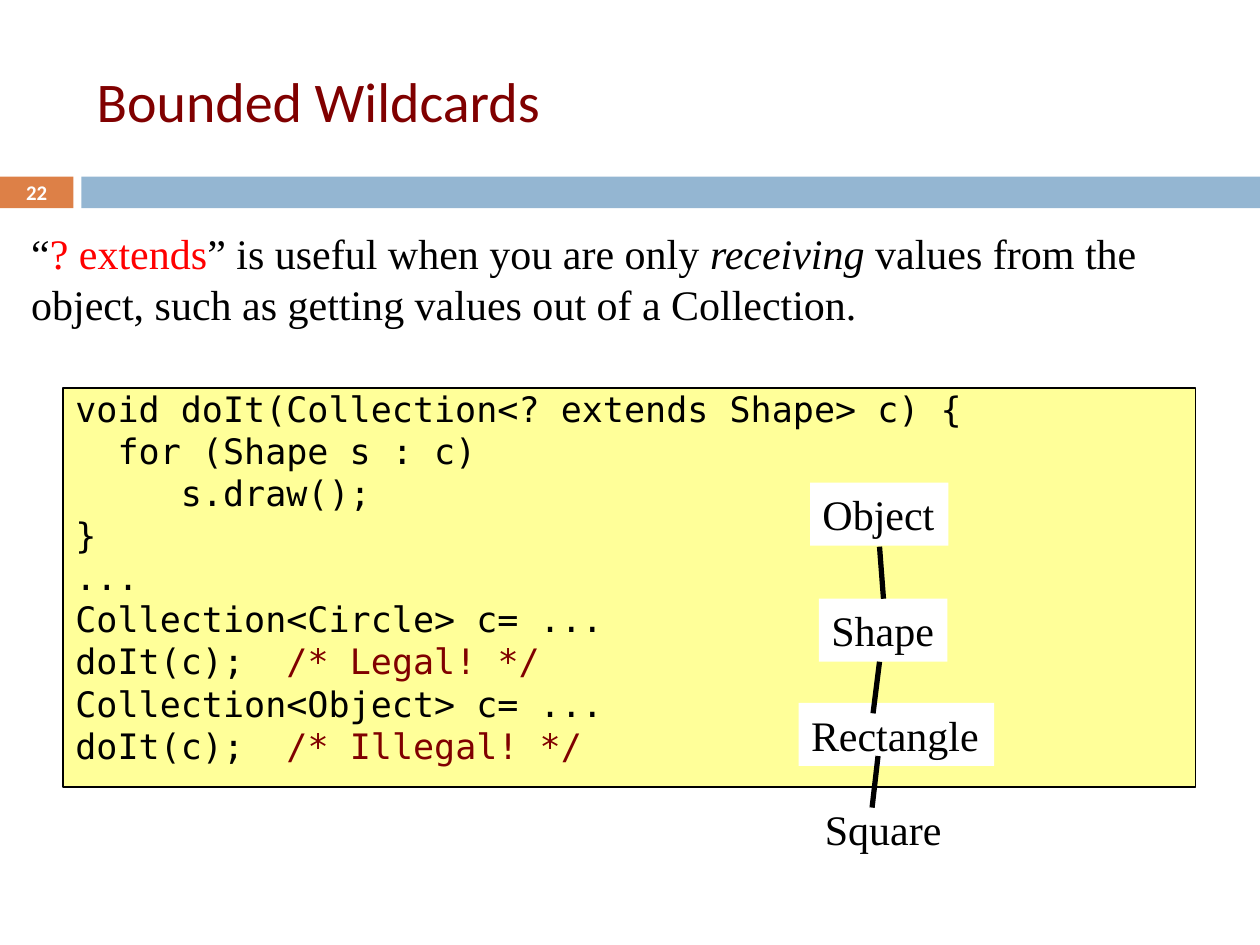
from pptx import Presentation
from pptx.dml.color import RGBColor
from pptx.enum.shapes import MSO_CONNECTOR, MSO_SHAPE
from pptx.enum.text import MSO_ANCHOR, PP_ALIGN
from pptx.oxml.ns import qn
from pptx.util import Cm, Pt
from lxml.etree import SubElement

SERIF, SANS, MONO = "Times New Roman", "Calibri", "DejaVu Sans Mono"
BLACK, WHITE, MAROON, RED = "000000", "FFFFFF", "800000", "FF0000"

CODE = [
    [("void doIt(Collection<? extends Shape> c) {", BLACK)],
    [("  for (Shape s : c)", BLACK)],
    [("     s.draw();", BLACK)],
    [("}", BLACK)],
    [("...", BLACK)],
    [("Collection<Circle> c= ...", BLACK)],
    [("doIt(c);  ", BLACK), ("/* Legal! */", MAROON)],
    [("Collection<Object> c= ...", BLACK)],
    [("doIt(c);  ", BLACK), ("/* Illegal! */", MAROON)],
]
NODES = [
    ("Object", 0.23, 0, 2.79),
    ("Shape", 0.41, 2.34, 2.59),
    ("Rectangle", 0, 4.44, 3.94),
    ("Square", 0.28, 6.35, 2.9),
]
LINKS = [
    (1.63, 1.29, 1.71, 2.34),
    (1.63, 3.61, 1.5, 4.65),
    (1.6, 5.51, 1.48, 6.55),
]


def rgb(value):
    """Turn a hex string into a colour."""
    return RGBColor.from_string(value)


def add_box(s, x, y, w, h, fill=None, line=None):
    """Add a rectangle without shadow, filled and outlined on request."""
    sp = s.shapes.add_shape(MSO_SHAPE.RECTANGLE, Cm(x), Cm(y), Cm(w), Cm(h))
    sp.shadow.inherit = False
    if fill:
        sp.fill.solid()
        sp.fill.fore_color.rgb = rgb(fill)
    else:
        sp.fill.background()
    if line:
        sp.line.color.rgb = rgb(line)
        sp.line.width = Pt(1)
    else:
        sp.line.fill.background()
    return sp


def write(sp, lines, font, size, anchor=MSO_ANCHOR.TOP, align=PP_ALIGN.LEFT,
          spacing=None, bold=False, wrap=True):
    """Fill a shape with lines, each a list of (text, colour) runs."""
    tf = sp.text_frame
    tf.word_wrap = wrap
    tf.vertical_anchor = anchor
    for i, line in enumerate(lines):
        p = tf.add_paragraph() if i else tf.paragraphs[0]
        p.alignment = align
        p.line_spacing = spacing
        p.font.name, p.font.size, p.font.bold = font, Pt(size), bold
        for text, color in line:
            r = p.add_run()
            r.text = text
            r.font.color.rgb = rgb(color)
    return tf


def add_title(s, x, y, w, h):
    """Place the slide title."""
    sp = s.shapes.add_textbox(Cm(x), Cm(y), Cm(w), Cm(h))
    write(sp, [[("Bounded Wildcards", MAROON)]], SANS, 32, MSO_ANCHOR.MIDDLE)


def add_band(s, x, y, w, h):
    """Place the slide number tab and the bar beside it."""
    tab, gap = 1.48, 0.16
    sp = add_box(s, x, y, tab, h, "DD8047")
    tf = write(sp, [[("22", WHITE)]], SANS, 11.9, MSO_ANCHOR.MIDDLE,
               PP_ALIGN.CENTER, bold=True)
    tf.margin_top = tf.margin_bottom = 0
    add_box(s, x + tab + gap, y, w - tab - gap, h, "94B6D2")


def add_body(s, x, y, w, h):
    """Place the explanation."""
    sp = s.shapes.add_textbox(Cm(x), Cm(y), Cm(w), Cm(h))
    runs = [
        ("“", BLACK),
        ("? extends", RED),
        ("” is useful when you are only ", BLACK),
        ("receiving", BLACK),
        (" values from the object, such as getting values out of a Collection.", BLACK),
    ]
    tf = write(sp, [runs], SERIF, 24, spacing=Pt(29))
    tf.paragraphs[0].runs[3].font.italic = True


def add_code(s, x, y, w, h):
    """Place the code listing."""
    sp = add_box(s, x, y, w, h, "FFFF99", BLACK)
    tf = write(sp, CODE, MONO, 20, spacing=Pt(24))
    tf.margin_top = 0


def add_tree(s, x, y):
    """Place the class hierarchy from its top left corner."""
    for name, dx, dy, w in NODES:
        sp = add_box(s, x + dx, y + dy, w, 1.27, WHITE)
        write(sp, [[(name, BLACK)]], SERIF, 24, wrap=False)
    for x1, y1, x2, y2 in LINKS:
        cn = s.shapes.add_connector(MSO_CONNECTOR.STRAIGHT, Cm(x + x1), Cm(y + y1),
                                    Cm(x + x2), Cm(y + y2))
        cn.line.color.rgb = rgb(BLACK)
        cn.line.width = Pt(3)
        SubElement(cn._element.spPr, qn("a:effectLst"))


def main():
    """Build and save the slide."""
    prs = Presentation()
    prs.slide_width, prs.slide_height = Cm(25.4), Cm(19.05)
    s = prs.slides.add_slide(prs.slide_layouts[6])
    add_band(s, 0, 3.56, 25.4, 0.64)
    add_body(s, 0.38, 4.45, 24.43, 3.38)
    add_title(s, 1.7, 0.64, 22.66, 2.74)
    add_code(s, 1.27, 7.82, 22.83, 8.05)
    add_tree(s, 16.1, 9.73)
    prs.save("out.pptx")


if __name__ == "__main__":
    main()
